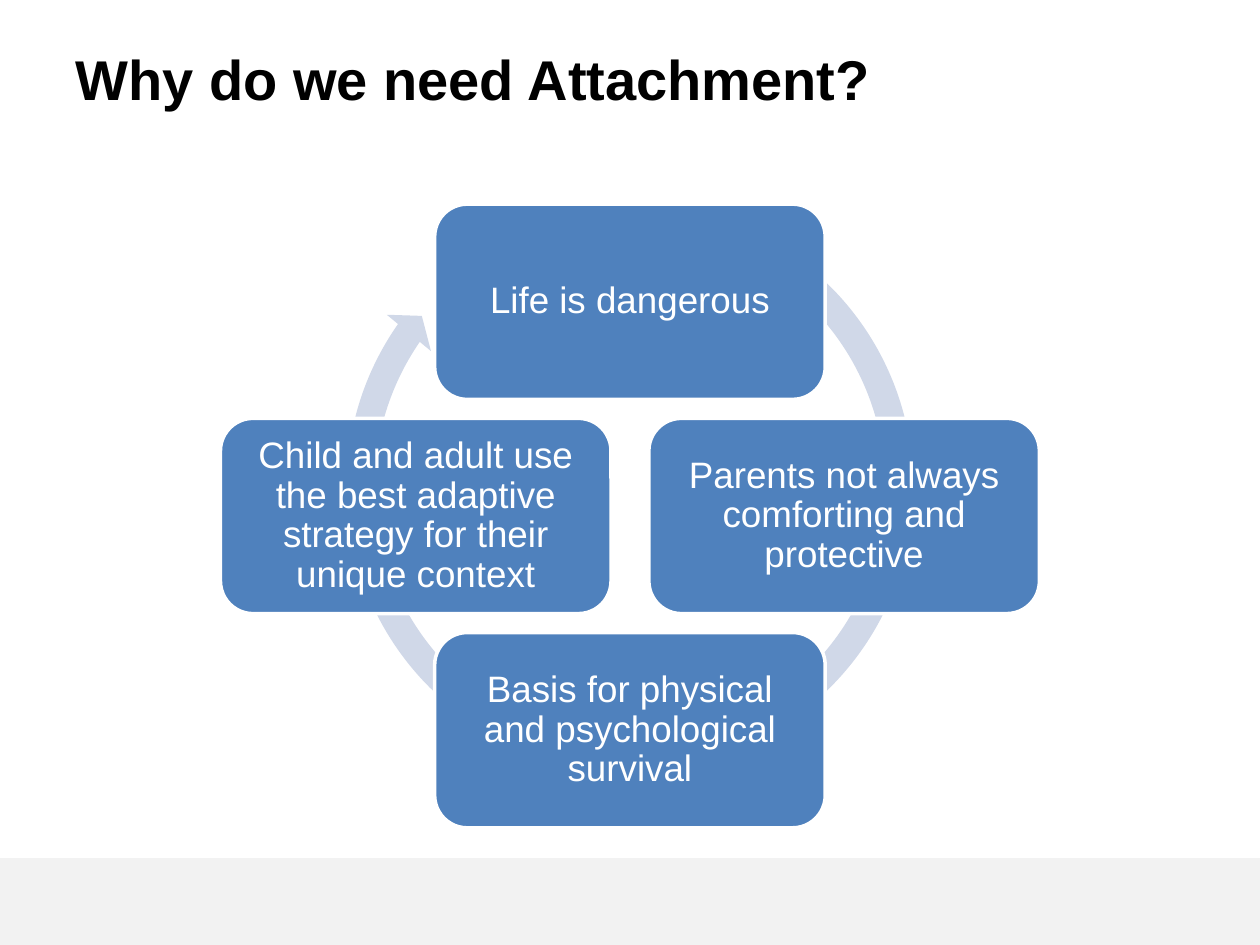
from pptx import Presentation
from pptx.dml.color import RGBColor
from pptx.enum.shapes import MSO_SHAPE as Shape
from pptx.enum.text import MSO_ANCHOR as Anchor, PP_ALIGN as Align
from pptx.util import Inches, Pt

COLORS = {
    "title": "000000",
    "box": "4F81BD",
    "box_text": "FFFFFF",
    "outline": "FFFFFF",
    "cycle": "D0D8E8",
    "footer": "F2F2F2",
}
TITLE_FONT = {"name": "Arial", "size": Pt(32), "bold": True}
BOX_FONT = {"name": "Arial", "size": Pt(21)}
BOX_FRAME = {
    "word_wrap": True,
    "vertical_anchor": Anchor.MIDDLE,
    **{f"margin_{side}": Inches(0.09) for side in ("left", "top", "right", "bottom")},
}


def add_filled(kind, left, top, width, height, color):
    """Add a borderless, shadowless shape; lengths are in inches."""
    shape = slide.shapes.add_shape(kind, *map(Inches, (left, top, width, height)))
    shape.shadow.inherit = False
    shape.fill.solid()
    shape.fill.fore_color.rgb = RGBColor.from_string(COLORS[color])
    shape.line.fill.background()
    return shape


def set_font(paragraph, values, color):
    for name, value in values.items():
        setattr(paragraph.font, name, value)
    paragraph.font.color.rgb = RGBColor.from_string(COLORS[color])


WIDTH, HEIGHT = 10, 7.5
presentation = Presentation()
presentation.slide_width, presentation.slide_height = Inches(WIDTH), Inches(HEIGHT)
slide = presentation.slides.add_slide(presentation.slide_layouts[5])

# Title
title = slide.shapes.title
title.left, title.top = Inches(0.05 * WIDTH), Inches(0.04 * HEIGHT)
title.width, title.height = Inches(0.9 * WIDTH), Inches(HEIGHT / 6)
title.text_frame.text = "Why do we need Attachment?"
title.text_frame.vertical_anchor = Anchor.TOP
title.text_frame.paragraphs[0].alignment = Align.LEFT
set_font(title.text_frame.paragraphs[0], TITLE_FONT, "title")

# Footer band
footer_top = 6.81
add_filled(Shape.RECTANGLE, 0, footer_top, WIDTH, HEIGHT - footer_top, "footer")

# Cycle arrow behind the boxes
arrow_size = 4.73
arrow = add_filled(Shape.CIRCULAR_ARROW, (WIDTH - arrow_size) / 2, 1.5,
                   arrow_size, arrow_size, "cycle")
for index, value in enumerate((0.047, 2.729, 128.918, 179.897, 0.048)):
    arrow.adjustments[index] = value

# Boxes, clockwise from the top, one step away from the centre
CENTER_X, CENTER_Y, STEP = WIDTH / 2, 4.095, 1.7
BOX_WIDTH, BOX_HEIGHT = 3.1, 1.55
boxes = [
    (0, -1, "Life is dangerous"),
    (1, 0, "Parents not always comforting and protective"),
    (0, 1, "Basis for physical and psychological survival"),
    (-1, 0, "Child and adult use the best adaptive strategy for their unique context"),
]
for column, row, text in boxes:
    box = add_filled(Shape.ROUNDED_RECTANGLE,
                     CENTER_X + column * STEP - BOX_WIDTH / 2,
                     CENTER_Y + row * STEP - BOX_HEIGHT / 2,
                     BOX_WIDTH, BOX_HEIGHT, "box")
    box.line.color.rgb = RGBColor.from_string(COLORS["outline"])
    box.line.width = Pt(2)
    frame = box.text_frame
    frame.text = text
    for name, value in BOX_FRAME.items():
        setattr(frame, name, value)
    paragraph = frame.paragraphs[0]
    paragraph.alignment = Align.CENTER
    paragraph.line_spacing = 0.9
    set_font(paragraph, BOX_FONT, "box_text")

presentation.save("out.pptx")
